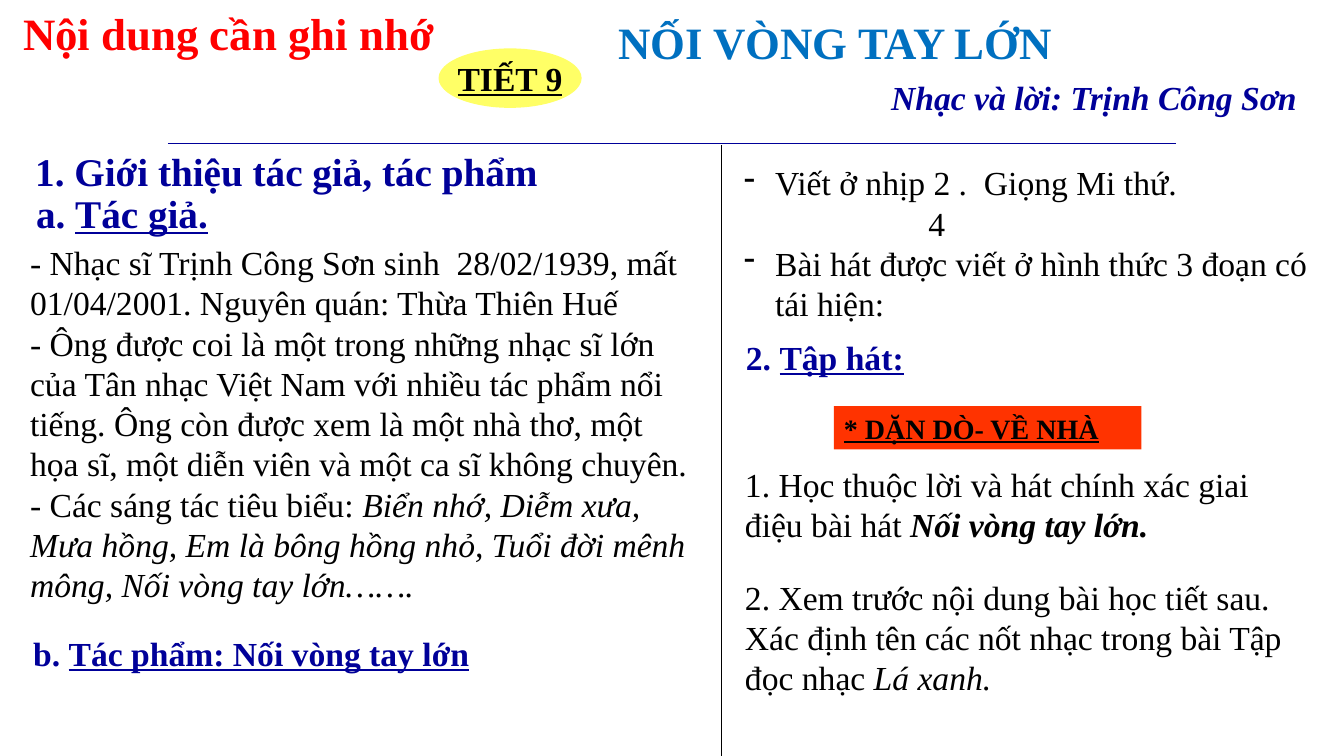
"""Build the lesson summary slide for the song Nối vòng tay lớn."""
from lxml.etree import SubElement
from pptx import Presentation
from pptx.dml.color import RGBColor
from pptx.enum.shapes import MSO_CONNECTOR, MSO_SHAPE
from pptx.enum.text import MSO_ANCHOR, MSO_AUTO_SIZE, PP_ALIGN
from pptx.oxml.ns import qn
from pptx.util import Inches, Pt

WIDTH, HEIGHT = Inches(13.33), Inches(7.5)
NAVY, BLACK = "000099", "000000"
BOLD = {"bold": True}
ITALIC = {"italic": True}
UNDERLINED = {"bold": True, "underline": True}
BOLD_ITALIC = {"bold": True, "italic": True}
BULLET_INDENT = 2.33
BEAT_INDENT = 13.73


def across(percent):
    """Return a share of the slide's width."""
    return round(WIDTH * percent / 100)


def down(percent):
    """Return a share of the slide's height."""
    return round(HEIGHT * percent / 100)


def color(value):
    """Return the colour for a hex string."""
    return RGBColor.from_string(value)


def frame_of(area):
    """Turn left, top, width and height percentages into lengths."""
    left, top, width, height = area
    return across(left), down(top), across(width), down(height)


def write(box, paragraphs, size, ink, align=PP_ALIGN.LEFT):
    """Fill a box with paragraphs, each a list of (text, format) spans."""
    frame = box.text_frame
    frame.word_wrap = True
    frame.auto_size = MSO_AUTO_SIZE.SHAPE_TO_FIT_TEXT
    for index, spans in enumerate(paragraphs):
        para = frame.add_paragraph() if index else frame.paragraphs[0]
        para.alignment = align
        for text, values in spans:
            span = para.add_run()
            span.text = text
            span.font.color.rgb = color(ink)
            settings = {"name": "Times New Roman", "size": Pt(size), **values}
            for name, value in settings.items():
                setattr(span.font, name, value)
    return frame


def add_text(page, area, paragraphs, size=24, ink=BLACK, align=PP_ALIGN.LEFT):
    """Add a wrapped text box."""
    box = page.shapes.add_textbox(*frame_of(area))
    return write(box, paragraphs, size, ink, align)


def add_heading(page, area, number, title, size=24):
    """Add a navy heading with a plain number and an underlined title."""
    add_text(page, area, [[(number, BOLD), (title, UNDERLINED)]], size, NAVY)


def add_label(page, kind, area, fill, text, size, align=PP_ALIGN.LEFT):
    """Add a filled shape with a bold underlined label."""
    shape = page.shapes.add_shape(kind, *frame_of(area))
    shape.shadow.inherit = False
    shape.fill.solid()
    shape.fill.fore_color.rgb = color(fill)
    shape.line.fill.background()
    frame = write(shape, [[(text, UNDERLINED)]], size, BLACK, align)
    frame.vertical_anchor = MSO_ANCHOR.TOP
    return frame


def add_rule(page, left, top, right, bottom, ink):
    """Add a thin straight line."""
    rule = page.shapes.add_connector(
        MSO_CONNECTOR.STRAIGHT, across(left), down(top), across(right), down(bottom))
    rule.line.color.rgb = color(ink)
    rule.line.width = Pt(0.75)
    SubElement(rule._element.spPr, qn("a:effectLst"))


def indent(para, percent, bullet=None):
    """Indent a paragraph and hang a bullet in the margin if one is given."""
    properties = para._p.get_or_add_pPr()
    properties.set("marL", str(across(percent)))
    if bullet:
        properties.set("indent", str(-across(percent)))
        SubElement(properties, qn("a:buChar")).set("char", bullet)


def add_header(page):
    """Add the titles, the lesson badge and the dividing lines."""
    badge = add_label(page, MSO_SHAPE.OVAL, (32.63, 6.4, 10.65, 7.87),
                      "FFFF66", "TIẾT 9", 24, PP_ALIGN.CENTER)
    settings = {"word_wrap": False, "auto_size": MSO_AUTO_SIZE.NONE,
                "vertical_anchor": MSO_ANCHOR.MIDDLE}
    for name, value in settings.items():
        setattr(badge, name, value)
    add_text(page, (65.57, 9.47, 32.33, 6.67),
             [[("Nhạc và lời: Trịnh Công Sơn", BOLD_ITALIC)]], ink=NAVY)
    add_rule(page, 12.5, 18.93, 87.5, 18.93, NAVY)
    add_rule(page, 53.71, 19.2, 53.71, 100, BLACK)
    add_text(page, (0.98, 0.13, 37.28, 8.53),
             [[("Nội dung cần ghi nhớ", BOLD)]], 32, "FF0000")
    add_text(page, (25.88, 1.33, 73.37, 8.53),
             [[("NỐI VÒNG TAY LỚN ", BOLD)]], 32, "0070C0", PP_ALIGN.CENTER)


def add_author_column(page):
    """Add the left column about the composer."""
    add_text(page, (1.88, 18.8, 50.71, 7.6),
             [[("1. Giới thiệu tác giả, tác phẩm", BOLD)]], 28, NAVY)
    add_heading(page, (1.95, 24.4, 19.8, 7.6), "a. ", "Tác giả.", 28)
    add_text(page, (1.5, 31.33, 51.24, 49.87), [
        [("- Nhạc sĩ Trịnh Công Sơn sinh  28/02/1939, mất 01/04/2001. "
          "Nguyên quán: Thừa Thiên Huế", {})],
        [("- Ông được coi là một trong những nhạc sĩ lớn của Tân nhạc Việt Nam "
          "với nhiều tác phẩm nổi tiếng. Ông còn được xem là một nhà thơ, một "
          "họa sĩ, một diễn viên và một ca sĩ không chuyên.", {})],
        [("- Các sáng tác tiêu biểu: ", {}),
         ("Biển nhớ, Diễm xưa, Mưa hồng, Em là bông hồng nhỏ, Tuổi đời mênh "
          "mông, Nối vòng tay lớn…….", ITALIC)],
    ])
    add_heading(page, (1.73, 83.07, 38.33, 6.67), "b. ", "Tác phẩm: Nối vòng tay lớn")


def add_song_column(page):
    """Add the right column about the song and the homework."""
    facts = add_text(page, (54.61, 20.8, 44.64, 22.93), [
        [("Viết ở nhịp 2 .  Giọng Mi thứ.", {})],
        [("4", {})],
        [("Bài hát được viết ở hình thức 3 đoạn có tái hiện:", {})],
    ])
    meter, beat, form = facts.paragraphs
    indent(meter, BULLET_INDENT, "-")
    indent(beat, BEAT_INDENT)
    indent(form, BULLET_INDENT, "-")
    add_heading(page, (54.76, 43.87, 33.68, 6.8), "2. ", "Tập hát:")
    add_label(page, MSO_SHAPE.RECTANGLE, (62.04, 53.73, 22.88, 5.73),
              "FF3300", "* DẶN DÒ- VỀ NHÀ", 20)
    add_text(page, (54.69, 60.67, 43.59, 12.13), [
        [("1. Học thuộc lời và hát chính xác giai điệu bài hát ", {}),
         ("Nối vòng tay lớn.", BOLD_ITALIC)]])
    add_text(page, (54.69, 75.6, 44.56, 17.47), [
        [("2. Xem trước nội dung bài học tiết sau. Xác định tên các nốt nhạc "
          "trong bài Tập đọc nhạc ", {}), ("Lá xanh.", ITALIC)]])


def main():
    """Build and save the deck."""
    deck = Presentation()
    deck.slide_width, deck.slide_height = WIDTH, HEIGHT
    page = deck.slides.add_slide(deck.slide_layouts[6])
    add_header(page)
    add_author_column(page)
    add_song_column(page)
    deck.save("out.pptx")


if __name__ == "__main__":
    main()
